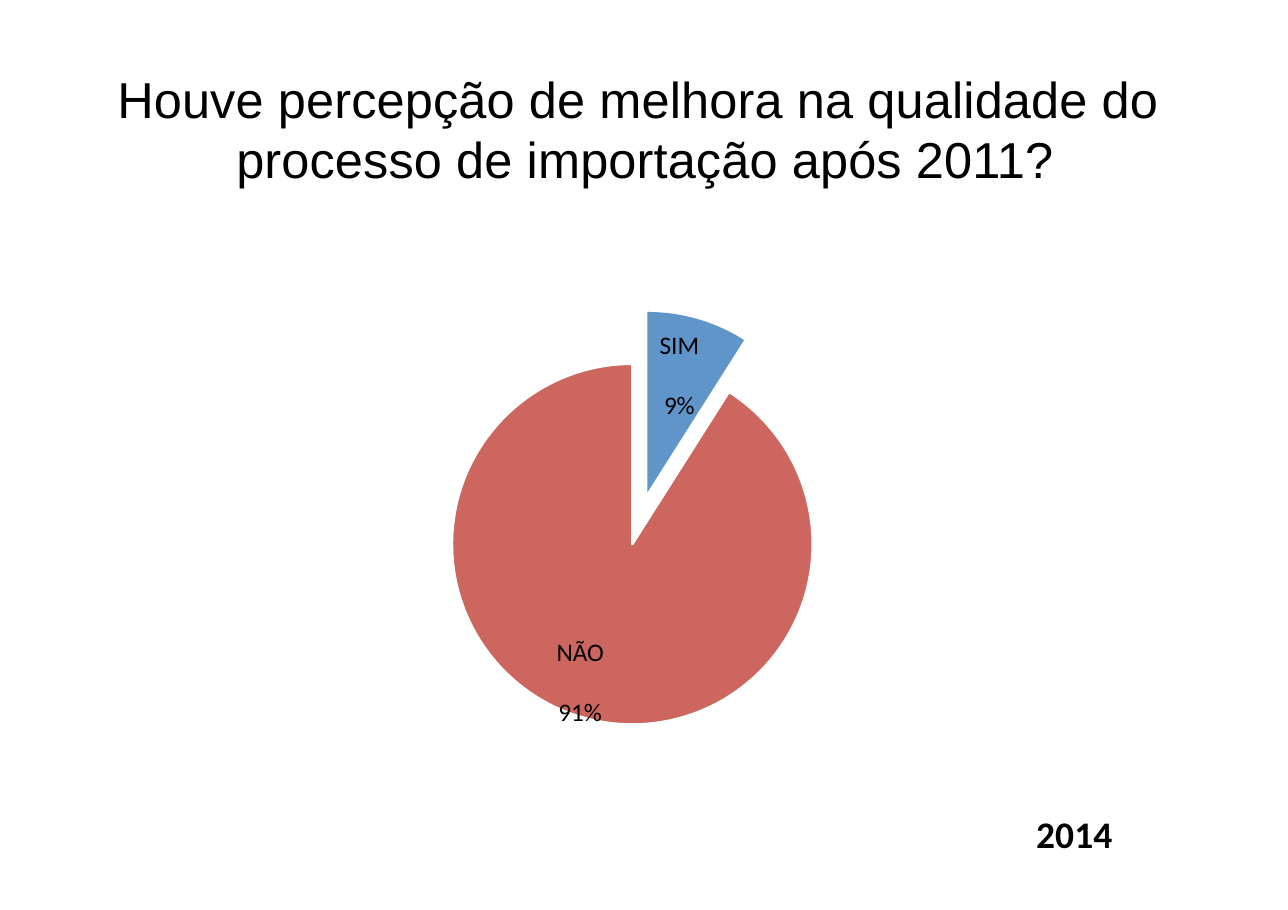
"""Build a slide with a two-slice pie on import quality."""
from math import cos, radians, sin
from typing import NamedTuple

from pptx import Presentation
from pptx.dml.color import RGBColor
from pptx.enum.text import MSO_ANCHOR, MSO_AUTO_SIZE, PP_ALIGN
from pptx.util import Inches, Pt

TOP = MSO_ANCHOR.TOP
FIXED = MSO_AUTO_SIZE.NONE
LEFT, MID = PP_ALIGN.LEFT, PP_ALIGN.CENTER
WIDE, HIGH = Inches(11.69), Inches(8.26)
HUES = {"ink": "000000", "yes": "6095C9", "no": "CD665F", "edge": "FFFFFF"}


class Spot(NamedTuple):
    """Hold a box as percent shares of the slide."""
    x: float
    y: float
    w: float
    h: float

    def box(self) -> tuple[int, int, int, int]:
        """Return left, top, width and height in EMU."""
        return (int(WIDE * self.x / 100), int(HIGH * self.y / 100),
                int(WIDE * self.w / 100), int(HIGH * self.h / 100))


class Slice(NamedTuple):
    """Describe one pie slice and its label."""
    name: str
    share: int
    hue: str
    burst: float
    edge: float
    spot: Spot


SLICES = [
    Slice("SIM", 9, "yes", 0.3, 0, Spot(51.05, 35.85, 3.4, 7)),
    Slice("NÃO", 91, "no", 0, 1.55, Spot(43.05, 69.6, 4, 7)),
]
HEAD = Spot(8.25, 7, 83.5, 20.2)
YEAR = Spot(80.45, 89.1, 6.5, 5.4)
HUB_X, HUB_Y, RADIUS = WIDE * 0.491, HIGH * 0.598, WIDE * 0.14
STEP = 2


def color(name: str) -> RGBColor:
    """Look up a named colour."""
    return RGBColor.from_string(HUES[name])


def write(shape, lines: list[str], *, size: float, font: str = "Calibri",
          bold: bool = False, align=LEFT, inset: float = 0, track: float = 0,
          pitch: float | None = None, lead: float = 0, gap: float = 0) -> None:
    """Fill a shape with formatted paragraphs."""
    frame = shape.text_frame
    frame.word_wrap, frame.auto_size = True, FIXED
    frame.vertical_anchor = TOP
    frame.margin_left = frame.margin_right = frame.margin_bottom = 0
    frame.margin_top = Inches(inset)
    for row, line in enumerate(lines):
        para = frame.add_paragraph() if row else frame.paragraphs[0]
        para.alignment = align
        para.space_before = Pt(gap if row else lead)
        if pitch:
            para.line_spacing = Pt(pitch)
        run = para.add_run()
        run.text = line
        run.font.name, run.font.size, run.font.bold = font, Pt(size), bold
        run.font.color.rgb = color("ink")
        if track:
            run._r.get_or_add_rPr().set("spc", str(int(track * 100)))


def title(slide) -> None:
    """Place the title with a hanging second line."""
    head = slide.shapes.title
    head.left, head.top, head.width, head.height = HEAD.box()
    write(head, ["Houve percepção de melhora na qualidade do "
                 "processo de importação após 2011?"],
          size=33, font="Arial", inset=0.04, track=0.1, pitch=39.3, lead=2.6)
    props = head.text_frame.paragraphs[0]._p.get_or_add_pPr()
    props.set("marL", str(Inches(1.18)))
    props.set("indent", str(Inches(-1.08)))


def polar(x: float, y: float, reach: float, turn: float) -> tuple[float, float]:
    """Return the point at a clockwise angle from the top."""
    return x + reach * sin(radians(turn)), y - reach * cos(radians(turn))


def wedge(slide, part: Slice, start: float, end: float) -> None:
    """Draw one slice, pushed out along its middle angle."""
    hub = polar(HUB_X, HUB_Y, RADIUS * part.burst, (start + end) / 2)
    count = round((end - start) / STEP)
    rim = [polar(*hub, RADIUS, start + (end - start) * step / count)
           for step in range(count + 1)]
    path = slide.shapes.build_freeform(*hub)
    path.add_line_segments(rim, close=True)
    shape = path.convert_to_shape()
    shape.shadow.inherit = False
    shape.fill.solid()
    shape.fill.fore_color.rgb = color(part.hue)
    if part.edge:
        shape.line.color.rgb, shape.line.width = color("edge"), Pt(part.edge)
    else:
        shape.line.fill.background()


def pie(slide) -> None:
    """Draw all slices clockwise, then their labels."""
    start = 0.0
    for part in SLICES:
        end = start + 3.6 * part.share
        wedge(slide, part, start, end)
        start = end
    for part in SLICES:
        write(slide.shapes.add_textbox(*part.spot.box()),
              [part.name, f"{part.share}%"], size=16.5, align=MID,
              inset=0.03, pitch=19.7, lead=1.8, gap=19.4)


def main() -> None:
    """Build and save the slide."""
    deck = Presentation()
    deck.slide_width, deck.slide_height = WIDE, HIGH
    slide = deck.slides.add_slide(deck.slide_layouts[5])
    title(slide)
    pie(slide)
    write(slide.shapes.add_textbox(*YEAR.box()), ["2014"],
          size=24.5, bold=True, track=0.1)
    deck.save("out.pptx")


if __name__ == "__main__":
    main()
